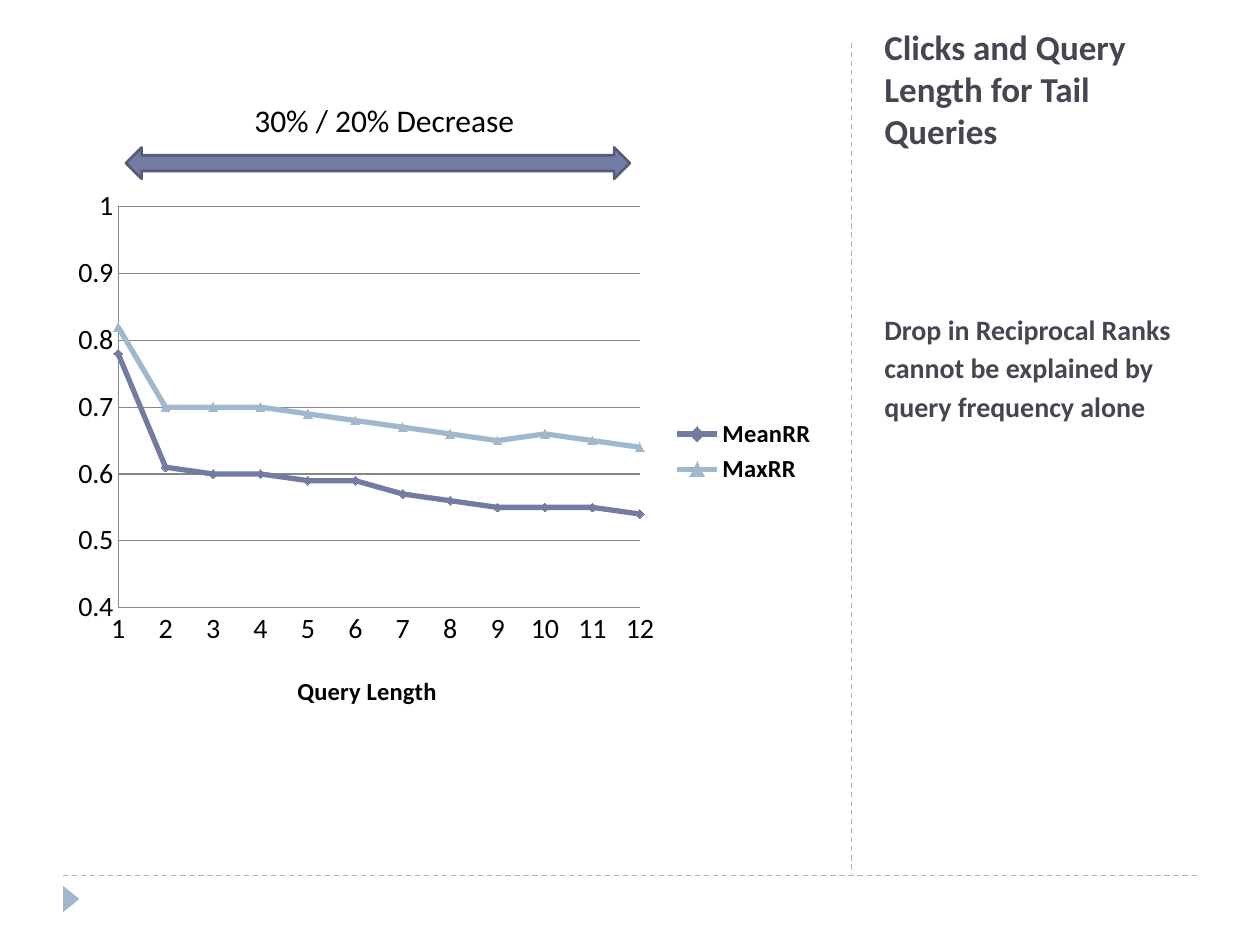
from lxml import etree
from pptx import Presentation
from pptx.chart.data import XyChartData
from pptx.dml.color import RGBColor
from pptx.enum.chart import (XL_AXIS_CROSSES, XL_CHART_TYPE, XL_LEGEND_POSITION,
                             XL_MARKER_STYLE, XL_TICK_MARK)
from pptx.enum.dml import MSO_LINE
from pptx.enum.shapes import MSO_CONNECTOR, MSO_SHAPE
from pptx.enum.text import MSO_ANCHOR
from pptx.oxml import parse_xml
from pptx.oxml.ns import nsdecls, qn
from pptx.util import Inches, Pt

FONT = "Calibri"
BLACK, GRAY, HEADING = "000000", "878787", "464653"
INDIGO, DARK_INDIGO, LIGHT_BLUE = "727CA3", "545C79", "9FB8CD"
DASH = MSO_LINE.DASH
NO_TICK = XL_TICK_MARK.NONE
SERIES = [
    ("MeanRR", INDIGO, XL_MARKER_STYLE.DIAMOND,
     [0.78, 0.61, 0.6, 0.6, 0.59, 0.59, 0.57, 0.56, 0.55, 0.55, 0.55, 0.54]),
    ("MaxRR", LIGHT_BLUE, XL_MARKER_STYLE.TRIANGLE,
     [0.82, 0.7, 0.7, 0.7, 0.69, 0.68, 0.67, 0.66, 0.65, 0.66, 0.65, 0.64]),
]


def color(hex_text):
    return RGBColor.from_string(hex_text)


def style_font(font, size, hex_text=BLACK, bold=False):
    font.name, font.size, font.bold = FONT, Pt(size), bold
    font.color.rgb = color(hex_text)


def style_line(line, hex_text, width):
    line.color.rgb = color(hex_text)
    line.width = Pt(width)


def add_text(slide, text, left, top, width, height, *, size, hex_text=BLACK,
             bold=False, anchor=MSO_ANCHOR.TOP, wrap=True, line_spacing=None):
    box = slide.shapes.add_textbox(Inches(left), Inches(top), Inches(width), Inches(height))
    frame = box.text_frame
    frame.word_wrap = wrap
    frame.vertical_anchor = anchor
    paragraph = frame.paragraphs[0]
    if line_spacing:
        paragraph.line_spacing = Pt(line_spacing)
    run = paragraph.add_run()
    run.text = text
    style_font(run.font, size, hex_text, bold)


def add_rule(slide, x1, y1, x2, y2):
    rule = slide.shapes.add_connector(
        MSO_CONNECTOR.STRAIGHT, Inches(x1), Inches(y1), Inches(x2), Inches(y2))
    style_line(rule.line, LIGHT_BLUE, 0.75)
    rule.line.dash_style = DASH
    etree.SubElement(rule._element.spPr, qn("a:effectLst"))


def add_preset(slide, preset, left, top, width, height, fill, outline=None, rotation=0):
    shape = slide.shapes.add_shape(
        preset, Inches(left), Inches(top), Inches(width), Inches(height))
    shape.shadow.inherit = False
    shape.rotation = rotation
    shape.fill.solid()
    shape.fill.fore_color.rgb = color(fill)
    if outline:
        style_line(shape.line, outline, 1.5)
    else:
        shape.line.fill.background()


def manual_layout(x, y, width=None, height=None):
    """Layout in fractions of the chart; a size makes it the inner plot area."""
    sized = width is not None
    values = [("xMode", "edge"), ("yMode", "edge"), ("x", x), ("y", y)]
    if sized:
        values = [("layoutTarget", "inner")] + values + [("w", width), ("h", height)]
    parts = "".join(f'<c:{name} val="{value}"/>' for name, value in values)
    return parse_xml(f'<c:layout {nsdecls("c")}><c:manualLayout>{parts}'
                     "</c:manualLayout></c:layout>")


def replace_layout(parent, layout, index):
    for old in parent.findall(qn("c:layout")):
        parent.remove(old)
    parent.insert(index, layout)


def style_axis(axis, minimum, maximum, step, gridlines):
    axis.minimum_scale, axis.maximum_scale, axis.major_unit = minimum, maximum, step
    axis.major_tick_mark = axis.minor_tick_mark = NO_TICK
    axis.has_major_gridlines = gridlines
    axis.crosses = XL_AXIS_CROSSES.MINIMUM
    style_font(axis.tick_labels.font, 16)
    axis.tick_labels.number_format = "General"
    axis.tick_labels.number_format_is_linked = False
    style_line(axis.format.line, GRAY, 0.75)
    if gridlines:
        style_line(axis.major_gridlines.format.line, GRAY, 0.75)


def add_rank_chart(slide):
    data = XyChartData()
    for name, _, _, ranks in SERIES:
        series_data = data.add_series(name)
        for length, rank in enumerate(ranks, start=1):
            series_data.add_data_point(length, rank)
    chart = slide.shapes.add_chart(
        XL_CHART_TYPE.XY_SCATTER_SMOOTH, Inches(0.5), Inches(1.42),
        Inches(6.08), Inches(4.33), data).chart
    style_font(chart.font, 10)
    chart.has_title = False
    plot = chart.plots[0]
    plot.vary_by_categories = False
    for series, (_, hex_text, marker, _) in zip(plot.series, SERIES):
        series.smooth = True
        style_line(series.format.line, hex_text, 3)
        series.marker.style = marker
        series.marker.size = 5
        series.marker.format.fill.solid()
        series.marker.format.fill.fore_color.rgb = color(hex_text)
        style_line(series.marker.format.line, hex_text, 0.75)

    length_axis = chart.category_axis
    style_axis(length_axis, 1, 12, 1, False)
    style_axis(chart.value_axis, 0.4, 1, 0.1, True)
    title = length_axis.axis_title
    run = title.text_frame.paragraphs[0].add_run()
    run.text = "Query Length"
    style_font(run.font, 14, bold=True)
    replace_layout(title._element, manual_layout(0.3, 0.9), 1)

    chart.has_legend = True
    chart.legend.position = XL_LEGEND_POSITION.RIGHT
    chart.legend.include_in_layout = False
    style_font(chart.legend.font, 14, bold=True)
    plot_area = chart._chartSpace.chart.plotArea
    replace_layout(plot_area, manual_layout(0.072, 0.051, 0.681, 0.735), 0)


def main():
    presentation = Presentation()
    presentation.slide_width, presentation.slide_height = Inches(10), Inches(7.5)
    slide = presentation.slides.add_slide(presentation.slide_layouts[6])
    add_rule(slide, 0.5, 6.95, 9.5, 6.95)
    add_rule(slide, 6.76, 0.34, 6.76, 6.94)
    add_preset(slide, MSO_SHAPE.ISOSCELES_TRIANGLE, 0.46, 7.07, 0.21, 0.13,
               LIGHT_BLUE, rotation=90)
    add_text(slide, "Clicks and Query Length for Tail Queries", 6.92, 0.33, 2.75, 0.92,
             size=20, hex_text=HEADING, bold=True, anchor=MSO_ANCHOR.BOTTOM)
    add_text(slide, "Drop in Reciprocal Ranks cannot be explained by query frequency alone",
             6.92, 2.39, 2.75, 4.24, size=16, hex_text=HEADING, bold=True, line_spacing=22)
    add_rank_chart(slide)
    add_preset(slide, MSO_SHAPE.LEFT_RIGHT_ARROW, 1, 1.17, 4, 0.25, INDIGO, DARK_INDIGO)
    add_text(slide, "30% / 20% Decrease", 1.92, 0.75, 2.29, 0.4, size=18, wrap=False)
    presentation.save("out.pptx")


if __name__ == "__main__":
    main()
